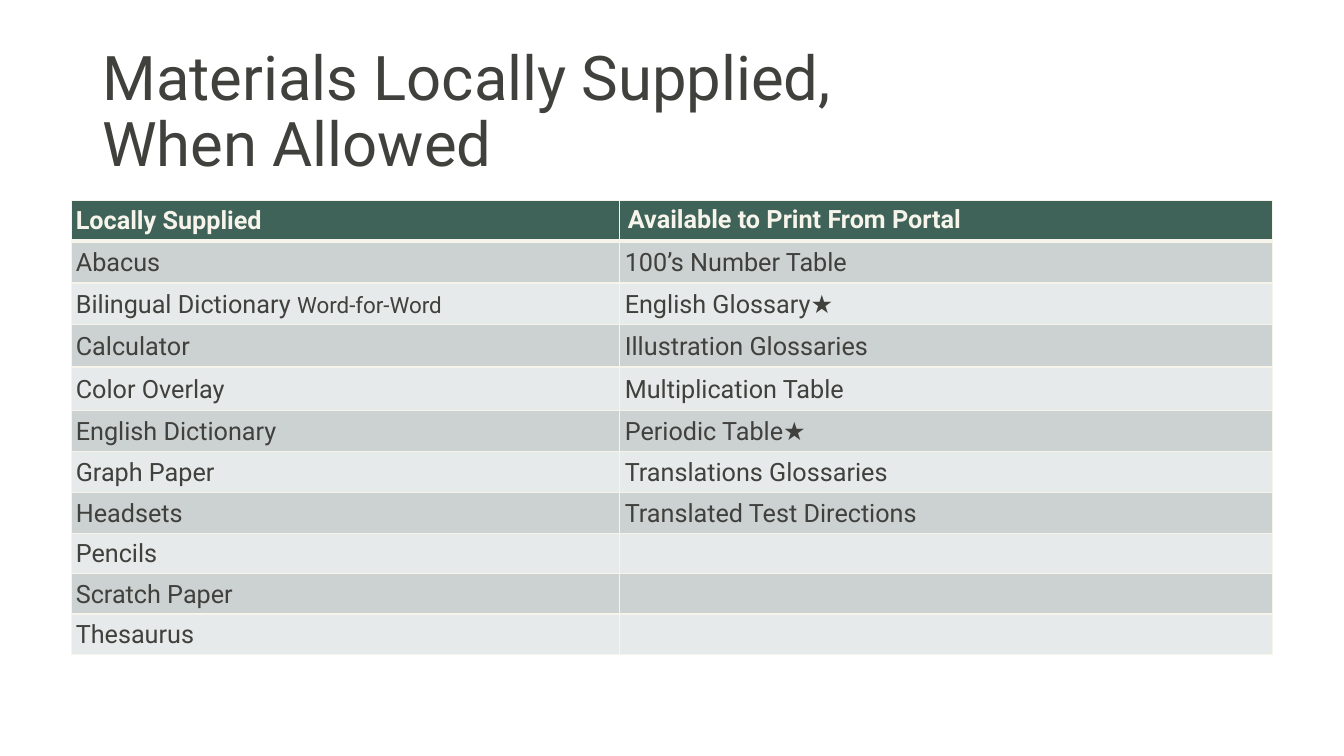
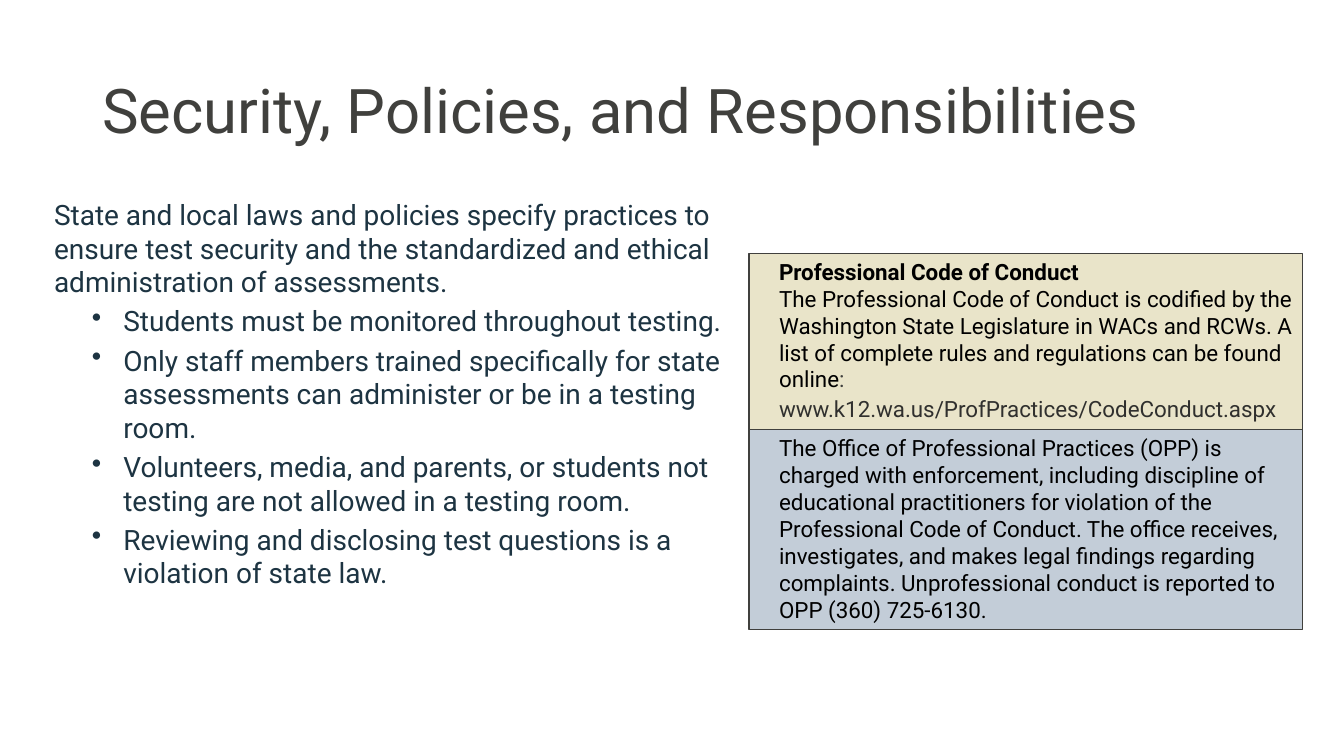
from lxml import etree
from pptx import Presentation
from pptx.dml.color import RGBColor
from pptx.enum.shapes import MSO_SHAPE
from pptx.enum.text import MSO_ANCHOR, PP_ALIGN
from pptx.oxml.ns import qn
from pptx.util import Pt

RECT = MSO_SHAPE.RECTANGLE
TOP, MID = MSO_ANCHOR.TOP, MSO_ANCHOR.MIDDLE
LEFT = PP_ALIGN.LEFT

# Shared style
FONT = "Roboto"
GREY, NAVY, BLACK, LINK = "40403D", "1D3442", "000000", "30302E"
CREAM, GREEN, SAND, BLUE = "F7F5EB", "3F6259", "E9E4C9", "C3CDD8"
BANDS = ["CCD1D2", "E7EAEA"]


def color(code):
    return RGBColor.from_string(code)


class Deck:
    def __init__(self):
        self.prs = Presentation()
        self.prs.slide_width, self.prs.slide_height = Pt(960), Pt(540)
        self.slide = None

    def page(self, *lines):
        """Start a slide with its title."""
        self.slide = self.prs.slides.add_slide(self.prs.slide_layouts[6])
        frame = self.frame(66, 28.8, 828, 104.4)
        frame.vertical_anchor = MID
        para = frame.paragraphs[0]
        para.line_spacing = 0.9
        for i, line in enumerate(lines):
            if i:
                para.add_line_break()
            self.run(para, line, 44, GREY)

    def frame(self, x, y, w, h):
        box = self.slide.shapes.add_textbox(Pt(x), Pt(y), Pt(w), Pt(h))
        box.text_frame.word_wrap = True
        return box.text_frame

    def run(self, para, text, size, ink, bold=False):
        run = para.add_run()
        run.text = text
        font = run.font
        font.name, font.size, font.bold = FONT, Pt(size), bold
        font.color.rgb = color(ink)

    def para(self, frame, first, left=0, hang=0, bullet=False):
        para = frame.paragraphs[0] if first else frame.add_paragraph()
        para.alignment = LEFT
        props = para._p.get_or_add_pPr()
        props.set("marL", str(Pt(left)))
        props.set("indent", str(Pt(-hang)))
        if bullet:
            etree.SubElement(props, qn("a:buChar")).set("char", "•")
        return para

    def body(self, x, y, w, h, lead, points):
        """Lead sentence with bullets below it."""
        frame = self.frame(x, y, w, h)
        self.run(self.para(frame, True), lead, 20, NAVY)
        for point in points:
            para = self.para(frame, False, 49.5, 22.5, True)
            para.space_before = Pt(4)
            self.run(para, point, 20, NAVY)

    def panel(self, x, y, w, h, fill, paras):
        """Outlined box; each paragraph is a list of runs."""
        box = self.slide.shapes.add_shape(RECT, Pt(x), Pt(y), Pt(w), Pt(h))
        box.shadow.inherit = False
        box.fill.solid()
        box.fill.fore_color.rgb = color(fill)
        box.line.color.rgb = color(GREY)
        box.line.width = Pt(0.75)
        frame = box.text_frame
        frame.word_wrap = True
        frame.vertical_anchor = TOP
        for i, runs in enumerate(paras):
            para = self.para(frame, i == 0, 14.4)
            for item in runs:
                self.run(para, *item)

    def edge(self, cell, side, width):
        props = cell._tc.get_or_add_tcPr()
        line = etree.SubElement(props, qn("a:ln" + side))
        line.set("w", str(Pt(width)))
        fill = etree.SubElement(line, qn("a:solidFill"))
        etree.SubElement(fill, qn("a:srgbClr")).set("val", CREAM)

    def cell(self, cell, row, runs, pad, gap):
        head = row == 0
        widths = {"L": 1, "R": 1, "T": 3 if row == 1 else 1, "B": 3 if head else 1}
        for side, width in widths.items():
            self.edge(cell, side, width)
        cell.fill.solid()
        cell.fill.fore_color.rgb = color(GREEN if head else BANDS[(row - 1) % 2])
        cell.vertical_anchor = TOP if head else MID
        cell.margin_left = cell.margin_right = Pt(pad)
        cell.margin_top = cell.margin_bottom = Pt(3)
        para = cell.text_frame.paragraphs[0]
        para.line_spacing = gap
        for text, size in runs:
            self.run(para, text, size, CREAM if head else GREY, head)

    def table(self, x, y, cols, highs, rows):
        shape = self.slide.shapes.add_table(
            len(rows), len(cols), Pt(x), Pt(y), Pt(sum(cols)), Pt(sum(highs)))
        table = shape.table
        table.horz_banding = False
        for col, width in zip(table.columns, cols):
            col.width = Pt(width)
        for r, (row, high) in enumerate(zip(rows, highs)):
            table.rows[r].height = Pt(high)
            for c, runs in enumerate(row):
                last = r == 0 and c == 1
                pad = 5.8 if last else (3, 3.6)[c]
                self.cell(table.cell(r, c), r, runs, pad, 1 if last else 1.06)


def main():
    deck = Deck()

    # Materials table
    deck.page("Materials Locally Supplied, ", "When Allowed")
    local = ["Locally Supplied", "Abacus", "Bilingual Dictionary ", "Calculator",
             "Color Overlay", "English Dictionary", "Graph Paper", "Headsets",
             "Pencils", "Scratch Paper", "Thesaurus"]
    portal = ["Available to Print From Portal", "100’s Number Table",
              "English Glossary★", "Illustration Glossaries",
              "Multiplication Table", "Periodic Table★",
              "Translations Glossaries", "Translated Test Directions"]
    portal += [""] * (len(local) - len(portal))
    rows = [[[(text, 18)] if text else [] for text in pair]
            for pair in zip(local, portal)]
    rows[2][0].append(("Word-for-Word", 16))
    highs = [27.5, 30, 29.5, 30.5, 31, 29.5, 29.5, 28, 28, 28, 28]
    deck.table(51.2, 143.3, [391.5, 466.5], highs, rows)

    # Rules and code of conduct
    deck.page("Security, Policies, and Responsibilities")
    deck.body(
        31.5, 137.5, 497, 335.5,
        "State and local laws and policies specify practices to ensure test "
        "security and the standardized and ethical administration of assessments.",
        ["Students must be monitored throughout testing.",
         "Only staff members trained specifically for state assessments can "
         "administer or be in a testing room.",
         "Volunteers, media, and parents, or students not testing are not "
         "allowed in a testing room.",
         "Reviewing and disclosing test questions is a violation of state law."])
    code = [
        [("Professional Code of Conduct", 16, BLACK, True)],
        [("The Professional Code of Conduct is codified by the Washington State "
          "Legislature in WACs and RCWs. A list of complete rules and "
          "regulations can be found online", 16, BLACK),
         (": ", 16, GREY),
         ("www.k12.wa.us/ProfPractices/CodeConduct.aspx", 16, LINK),
         (" ", 18, GREY)]]
    office = [
        [("The Office of Professional Practices (OPP) is charged with "
          "enforcement, including discipline of educational practitioners for "
          "violation of the Professional Code of Conduct. The office receives, "
          "investigates, and makes legal findings regarding complaints. "
          "Unprofessional conduct is reported to OPP (360) 725-6130.",
          16, BLACK)]]
    top = 180.8
    for fill, high, paras in [(SAND, 126, code), (BLUE, 143, office)]:
        deck.panel(535, top, 395.3, high, fill, paras)
        top += high

    deck.prs.save("out.pptx")


if __name__ == "__main__":
    main()
